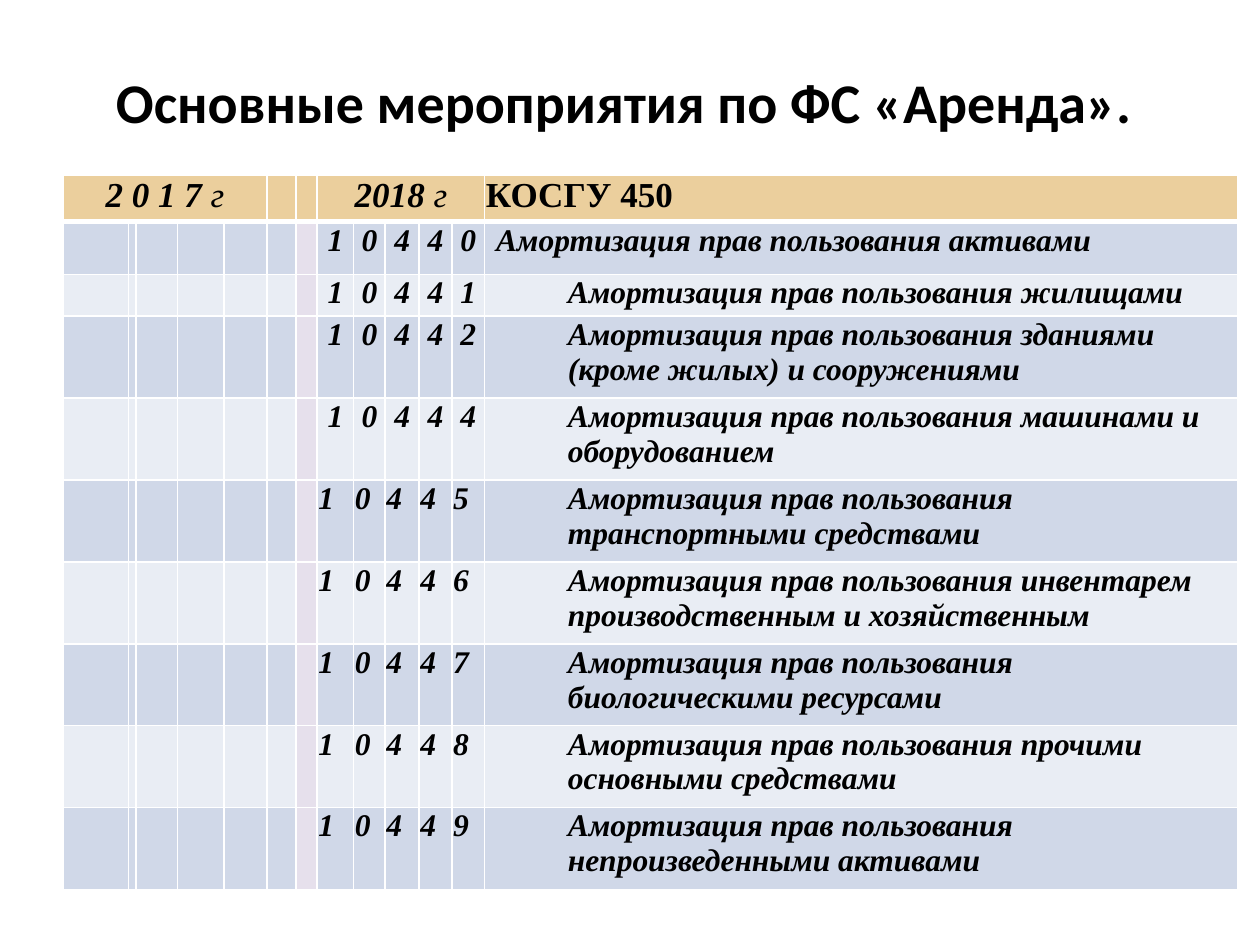
from pptx import Presentation
from pptx.dml.color import RGBColor as RGB
from pptx.enum.text import MSO_ANCHOR as Anchor, PP_ALIGN as Align
from pptx.oxml import parse_xml
from pptx.oxml.ns import nsdecls
from pptx.util import Inches, Pt

THEME = {
    "title_font": "Calibri", "body_font": "Times New Roman",
    "title": 32, "head": 20, "body": 18,
    "text": "000000", "line": "FFFFFF", "header": "EBCF9D",
    "bands": ("D0D8E8", "E9EDF4"), "gap": "E6E0EC",
}
TITLE = "Основные мероприятия по ФС «Аренда»."
YEARS = [(0, "2 0 1 7 "), (7, "2018 ")]
HEADING = "КОСГУ 450"
ACCOUNTS = [
    ("10440", "Амортизация прав пользования активами"),
    ("10441", "Амортизация прав пользования жилищами"),
    ("10442", "Амортизация прав пользования зданиями (кроме жилых) и сооружениями"),
    ("10444", "Амортизация прав пользования машинами и оборудованием"),
    ("10445", "Амортизация прав пользования транспортными средствами"),
    ("10446", "Амортизация прав пользования инвентарем производственным и хозяйственным"),
    ("10447", "Амортизация прав пользования биологическими ресурсами"),
    ("10448", "Амортизация прав пользования прочими основными средствами"),
    ("10449", "Амортизация прав пользования непроизведенными активами"),
]
WIDTHS = [0.52, 0.05, 0.33, 0.37, 0.34, 0.23, 0.17,
          0.29, 0.25, 0.27, 0.26, 0.26, 5.98]
HEIGHTS = [0.37, 0.42, 0.33] + [0.65] * 7
GAP, CODE, NAME = 6, 7, 12
CENTRED = 4  # account rows whose digits are centred


def style(font, size, face, bold=True, italic=False):
    font.size, font.name = Pt(size), face
    font.bold, font.italic = bold, italic
    font.color.rgb = RGB.from_string(THEME["text"])


def paint(cell, fill, top=1, bottom=1):
    """Set margins, borders and fill; borders must precede the fill."""
    cell.margin_left = cell.margin_right = cell.margin_top = Inches(0.01)
    cell.margin_bottom = 0
    props = cell._tc.get_or_add_tcPr()
    for side, width in zip("LRTB", (1, 1, top, bottom)):
        props.append(parse_xml(
            f'<a:ln{side} {nsdecls("a")} w="{Pt(width)}"><a:solidFill>'
            f'<a:srgbClr val="{THEME["line"]}"/></a:solidFill></a:ln{side}>'))
    cell.fill.solid()
    cell.fill.fore_color.rgb = RGB.from_string(fill)


def write(cell, text, size, align=Align.LEFT, italic=True):
    para = cell.text_frame.paragraphs[0]
    para.text, para.alignment = text, align
    style(para.font, size, THEME["body_font"], italic=italic)
    return para


def add_title(slide):
    title = slide.shapes.title
    title.left, title.top, title.width, title.height = map(
        Inches, (0.5, 0.3, 8.91, 1.01))
    frame = title.text_frame
    frame.text, frame.vertical_anchor = TITLE, Anchor.MIDDLE
    para = frame.paragraphs[0]
    para.alignment = Align.CENTER
    style(para.font, THEME["title"], THEME["title_font"])


def add_grid(slide):
    grid = slide.shapes.add_table(
        len(HEIGHTS), len(WIDTHS), Inches(0.5), Inches(1.39),
        Inches(sum(WIDTHS)), Inches(sum(HEIGHTS))).table
    grid.first_row = grid.horz_banding = False
    for col, width in zip(grid.columns, WIDTHS):
        col.width = Inches(width)
    for row, height in zip(grid.rows, HEIGHTS):
        row.height = Inches(height)
    return grid


def fill_head(grid):
    for col in range(len(WIDTHS)):
        paint(grid.cell(0, col), THEME["header"], bottom=3)
    for col, year in YEARS:
        cell = grid.cell(0, col)
        cell.merge(grid.cell(0, col + 4))
        para = write(cell, year, THEME["head"], Align.CENTER)
        run = para.add_run()
        run.text, run.font.bold = "г", False
    write(grid.cell(0, NAME), HEADING, THEME["head"], italic=False)


def fill_rows(grid):
    for row, (code, name) in enumerate(ACCOUNTS, 1):
        band = THEME["bands"][(row - 1) % 2]
        for col in range(len(WIDTHS)):
            paint(grid.cell(row, col), THEME["gap"] if col == GAP else band,
                  top=3 if row == 1 else 1)
        align = Align.CENTER if row <= CENTRED else Align.LEFT
        for col, digit in enumerate(code, CODE):
            write(grid.cell(row, col), digit, THEME["body"], align)
        cell = grid.cell(row, NAME)
        write(cell, name, THEME["body"])
        cell.margin_left = Inches(0.09 if row == 1 else 0.66)


def main():
    deck = Presentation()
    deck.slide_width, deck.slide_height = Inches(10), Inches(7.5)
    slide = deck.slides.add_slide(deck.slide_layouts[5])
    add_title(slide)
    grid = add_grid(slide)
    fill_head(grid)
    fill_rows(grid)
    deck.save("out.pptx")


if __name__ == "__main__":
    main()
